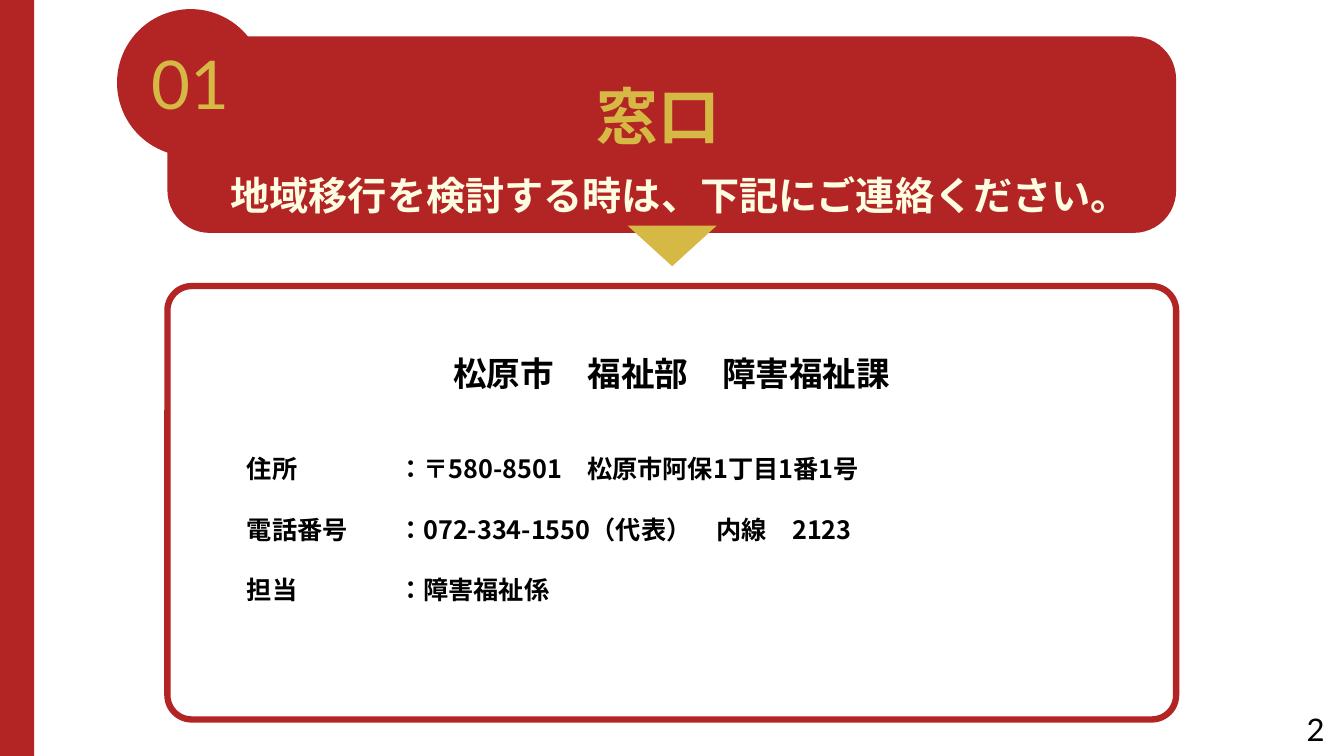
from dataclasses import dataclass

from lxml import etree
from pptx import Presentation
from pptx.dml.color import RGBColor
from pptx.enum.lang import MSO_LANGUAGE_ID
from pptx.enum.shapes import MSO_SHAPE
from pptx.enum.text import MSO_ANCHOR, MSO_AUTO_SIZE, PP_ALIGN
from pptx.oxml.ns import qn
from pptx.util import Cm, Pt

ROUNDED, TRIANGLE = MSO_SHAPE.ROUNDED_RECTANGLE, MSO_SHAPE.ISOSCELES_TRIANGLE
OVAL, RECTANGLE = MSO_SHAPE.OVAL, MSO_SHAPE.RECTANGLE
LEFT, CENTER, RIGHT = PP_ALIGN.LEFT, PP_ALIGN.CENTER, PP_ALIGN.RIGHT
TOP, MIDDLE = MSO_ANCHOR.TOP, MSO_ANCHOR.MIDDLE
JAPANESE = MSO_LANGUAGE_ID.JAPANESE


@dataclass(frozen=True)
class Theme:
    red: str = "B32425"
    gold: str = "D6B845"
    cream: str = "FFFDE1"
    white: str = "FFFFFF"
    black: str = "000000"
    latin: str = "Lato"
    heading: str = "Roboto"
    japanese: str = "Noto Sans CJK JP"
    number_size: float = 48
    title_size: float = 44
    lead_size: float = 28
    heading_size: float = 24
    row_size: float = 18
    page_number_size: float = 22.2


theme = Theme()


def add_block(kind, left, top, width, height, fill, line=None):
    """Add a flat preset shape, measured in centimetres."""
    block = page.shapes.add_shape(kind, Cm(left), Cm(top), Cm(width), Cm(height))
    block.shadow.inherit = False
    block.fill.solid()
    block.fill.fore_color.rgb = RGBColor.from_string(fill)
    if line:
        block.line.color.rgb = RGBColor.from_string(line)
        block.line.width = Pt(4.5)
    else:
        block.line.fill.background()
    return block


def write(para, text, size, color, font=theme.latin, bold=False, align=LEFT,
          spacing=1.0, before=0):
    """Write one formatted run into a paragraph."""
    para.alignment = align
    para.line_spacing = spacing
    para.space_before = Pt(before)
    span = para.add_run()
    span.text = text
    span.font.size = Pt(size)
    span.font.bold = bold
    span.font.name = font
    span.font.language_id = JAPANESE
    span.font.color.rgb = RGBColor.from_string(color)
    east_asian = etree.SubElement(span.font._element, qn("a:ea"))
    east_asian.set("typeface", theme.japanese)


deck = Presentation()
deck.slide_width, deck.slide_height = Cm(33.87), Cm(19.05)
page = deck.slides.add_slide(deck.slide_layouts[1])
title, body = page.placeholders
layers = title.element.getparent()

# Red banner with the title
banner = add_block(ROUNDED, 4.22, 0.92, 25.42, 4.95, theme.red)
banner.adjustments[0] = 0.216
layers.append(title.element)
title.left, title.top, title.width, title.height = Cm(8.33), Cm(1.83), Cm(16.51), Cm(2.49)
title.text_frame.vertical_anchor = TOP
title.text_frame.auto_size = MSO_AUTO_SIZE.NONE
write(title.text_frame.paragraphs[0], "窓口", theme.title_size, theme.gold,
      font=theme.japanese, bold=True, align=CENTER)

# Framed panel and the pointer above it
panel = add_block(ROUNDED, 4.22, 7.21, 25.42, 10.92, theme.white, line=theme.red)
panel.adjustments[0] = 0.056
pointer = add_block(TRIANGLE, 15.82, 5.69, 2.24, 1.02, theme.gold)
pointer.element.spPr.find(qn("a:xfrm")).set("flipV", "1")

# Contact details
layers.append(body.element)
body.left, body.top, body.width, body.height = Cm(4.7), Cm(8.26), Cm(24.46), Cm(8.2)
details = body.text_frame
details.auto_size = MSO_AUTO_SIZE.NONE
write(details.paragraphs[0], "松原市　福祉部　障害福祉課", theme.heading_size, theme.black,
      font=theme.heading, bold=True, align=CENTER, spacing=1.5)
contacts = [
    ("住所", "〒580-8501　松原市阿保1丁目1番1号"),
    ("電話番号", "072-334-1550（代表）　内線　2123"),
    ("担当", "障害福祉係"),
]
for index, (label, value) in enumerate(contacts):
    write(details.add_paragraph(), f"{label}\t：{value}", theme.row_size, theme.black,
          font=theme.japanese, bold=True, before=21.6 if index else 43)
for index, para in enumerate(details.paragraphs):
    layout = para._p.get_or_add_pPr()
    layout.set("marL", str(Cm(1.27) if index else 0))
    layout.set("indent", "0")
    layout.set("defTabSz", str(Cm(3.81)))
    etree.SubElement(layout, qn("a:buNone"))

# Section number
badge = add_block(OVAL, 2.95, 0.23, 3.71, 3.71, theme.red)
badge.text_frame.vertical_anchor = MIDDLE
write(badge.text_frame.paragraphs[0], "01", theme.number_size, theme.gold, align=CENTER)

# Lead sentence and page number
captions = [
    ((5.56, 4.19, 23.19, 1.45), TOP, "地域移行を検討する時は、下記にご連絡ください。",
     dict(size=theme.lead_size, color=theme.cream, bold=True)),
    ((25.73, 17.86, 7.9, 1.02), MIDDLE, "2",
     dict(size=theme.page_number_size, color=theme.black, align=RIGHT)),
]
for place, anchor, text, style in captions:
    box = page.shapes.add_textbox(*map(Cm, place))
    box.text_frame.word_wrap = True
    box.text_frame.vertical_anchor = anchor
    write(box.text_frame.paragraphs[0], text, **style)

# Left edge
add_block(RECTANGLE, 0, 0, 0.86, 19.05, theme.red)

deck.save("out.pptx")
